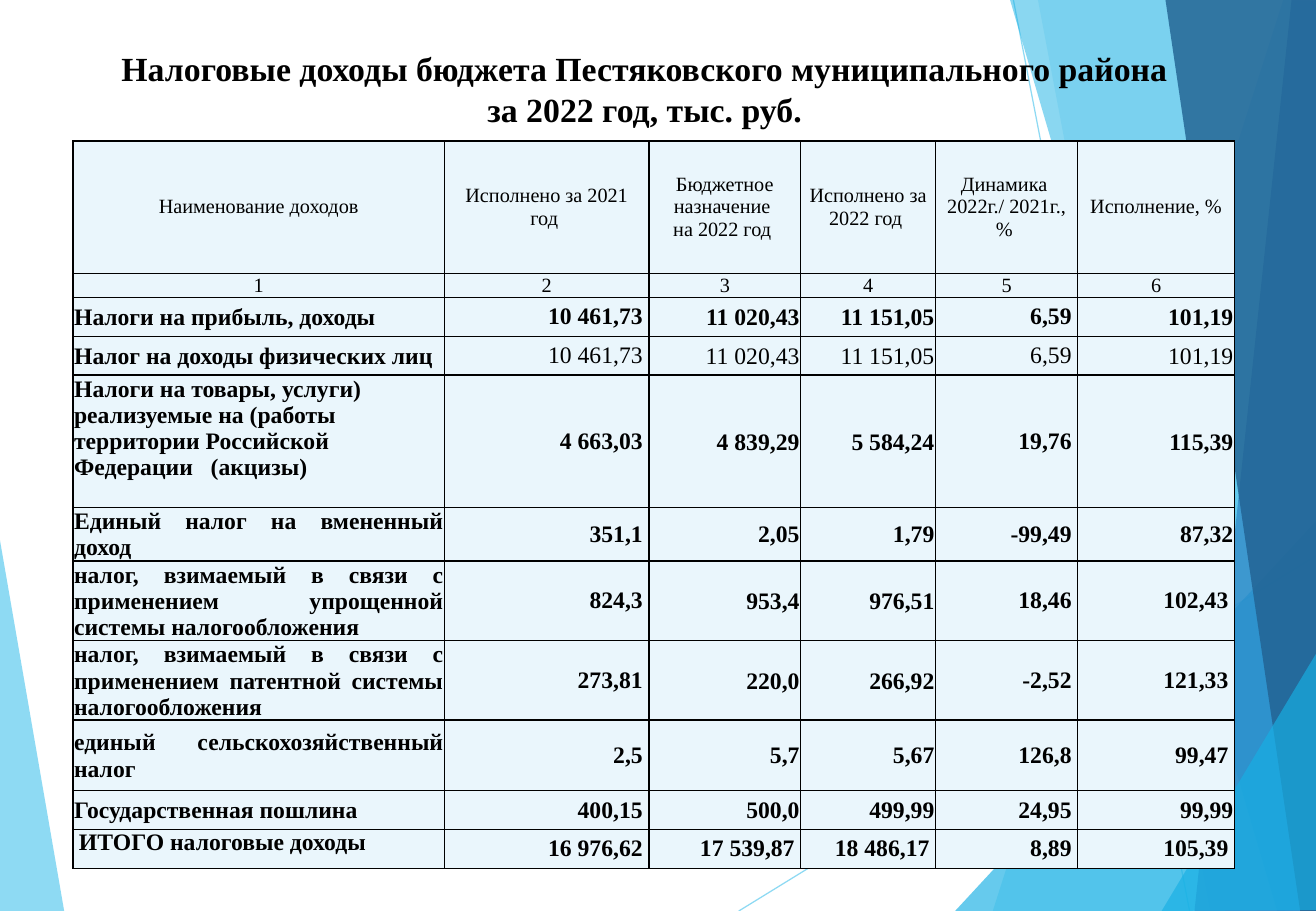
from pptx import Presentation
from pptx.dml.color import RGBColor as RGB
from pptx.enum.shapes import MSO_CONNECTOR as CONN
from pptx.enum.text import MSO_ANCHOR as ANCHOR, MSO_AUTO_SIZE as AUTO, PP_ALIGN as ALIGN
from pptx.oxml.ns import qn
from pptx.util import Inches, Pt
from lxml.etree import SubElement

COLORS = {
    "text": "000000",
    "cell": "EAF6FC",
    "sky": "5FCBEF",
    "azure": "17B0E4",
    "blue": "2E83C3",
    "navy": "226292",
}

LEFT_FACET = ("sky", 70, [(-0.01, 4.39), (0.53, 7.51), (-0.01, 7.5)])
RAYS = [((6.08, 7.5), (10.84, 4.57)), ((8.34, 0), (9.79, 7.5))]
RIGHT_FACETS = [
    ("sky", 36, [(10.56, 0), (8.17, 7.5), (10.85, 7.51), (10.84, 0.01)]),
    ("sky", 20, [(8.54, -0.01), (9.96, 7.5), (10.84, 7.5), (10.84, -0.01)]),
    ("azure", 66, [(7.86, 7.5), (10.83, 4.29), (10.84, 7.5)]),
    ("azure", 50, [(8.31, -0.01), (10.51, 7.5), (10.84, 7.49), (10.84, -0.01)]),
    ("blue", 70, [(10.63, -0.01), (9.83, 7.5), (10.84, 7.5), (10.84, -0.01)]),
    ("navy", 82, [(9.59, -0.01), (10.7, 7.5), (10.85, 7.5), (10.84, -0.01)]),
    ("azure", 66, [(9.56, 7.5), (10.85, 5.35), (10.86, 7.49)]),
]

COLS = [3.06, 1.68, 1.25, 1.11, 1.17, 1.29]
HEIGHTS = [1.09, 0.2, 0.32, 0.32, 1.09, 0.44, 0.65, 0.65, 0.58, 0.32, 0.32]
ROWS = [
    ["Наименование доходов", "Исполнено за 2021 год ", "Бюджетное назначение \nна 2022 год ",
     "Исполнено за 2022 год ", "Динамика \n2022г./ 2021г.,% ", "Исполнение, %"],
    ["1", "2", "3", "4", "5", "6"],
    ["Нaлоги нa прибыль, доходы",
     "10 461,73", "11 020,43", "11 151,05", "6,59", "101,19"],
    ["Нaлог нa доходы физических лиц",
     "10 461,73", "11 020,43", "11 151,05", "6,59", "101,19"],
    ["Налоги нa товары, услуги) реализуемые нa (работы территории Российской Федерации   (акцизы)",
     "4 663,03", "4 839,29", "5 584,24", "19,76", "115,39"],
    ["Единый налог на вмененный доход",
     "351,1", "2,05", "1,79", "-99,49", "87,32"],
    ["налог, взимаемый в связи с применением упрощенной системы налогообложения ",
     "824,3", "953,4", "976,51", "18,46", "102,43"],
    ["налог, взимаемый в связи с применением патентной системы налогообложения",
     "273,81", "220,0", "266,92", "-2,52", "121,33"],
    ["единый сельскохозяйственный налог ",
     "2,5", "5,7", "5,67", "126,8", "99,47"],
    ["Государственная пошлина ",
     "400,15", "500,0", "499,99", "24,95", "99,99"],
    ["ИТОГО налоговые доходы",
     "16 976,62", "17 539,87", "18 486,17", "8,89", "105,39"],
]
HEADER_ROWS = 2
PERSONAL_TAX, EXCISE, TOTAL = 3, 4, 10
SPECIAL_REGIMES = (6, 7, 8)


class Deck:
    font = "Times New Roman"

    def __init__(self, prs):
        self.s = prs.slides.add_slide(prs.slide_layouts[5])

    def color(self, name):
        return RGB.from_string(COLORS[name])

    def set_alpha(self, element, percent):
        clr = element.find(".//" + qn("a:srgbClr"))
        SubElement(clr, qn("a:alpha"), val=str(percent * 1000))

    def facet(self, color, alpha, points):
        (x, y), *rest = [(Inches(px), Inches(py)) for px, py in points]
        builder = self.s.shapes.build_freeform(x, y)
        builder.add_line_segments(rest)
        sp = builder.convert_to_shape()
        sp.shadow.inherit = False
        sp.line.fill.background()
        sp.fill.solid()
        sp.fill.fore_color.rgb = self.color(color)
        self.set_alpha(sp._element.spPr, alpha)

    def ray(self, start, end):
        sp = self.s.shapes.add_connector(CONN.STRAIGHT, *map(Inches, start + end))
        sp.line.color.rgb = self.color("sky")
        sp.line.width = Pt(0.75)
        self.set_alpha(sp._element.spPr, 70)
        SubElement(sp._element.spPr, qn("a:effectLst"))

    def add_text(self, tf, text, size, bold, align):
        for i, line in enumerate(text.split("\n")):
            p = tf.add_paragraph() if i else tf.paragraphs[0]
            p.alignment = align
            r = p.add_run()
            r.text = line
            r.font.name = self.font
            r.font.size = Pt(size)
            r.font.bold = bold
            r.font.color.rgb = self.color("text")

    def title(self, text, x, y, w, h):
        sp = self.s.shapes.title
        self.s.shapes._spTree.append(sp._element)
        sp.left, sp.top, sp.width, sp.height = map(Inches, (x, y, w, h))
        tf = sp.text_frame
        tf.word_wrap = True
        tf.auto_size = AUTO.NONE
        tf.vertical_anchor = ANCHOR.MIDDLE
        self.add_text(tf, text, 20, True, ALIGN.CENTER)

    def border(self, cell):
        tcPr = cell._tc.get_or_add_tcPr()
        for side in ("a:lnL", "a:lnR", "a:lnT", "a:lnB"):
            ln = SubElement(tcPr, qn(side), w=str(Pt(1)))
            fill = SubElement(ln, qn("a:solidFill"))
            SubElement(fill, qn("a:srgbClr"), val=COLORS["text"])

    def cell(self, cell, text, row, col):
        header = row < HEADER_ROWS
        padded = (header or row == TOTAL or col in (1, 4)
                  or (col == 5 and row in SPECIAL_REGIMES))
        cell.margin_left = cell.margin_right = Inches(0.05 if padded else 0.01)
        cell.margin_top = Inches(0 if padded else 0.01)
        cell.margin_bottom = 0
        top = col == 0 and row in (EXCISE, TOTAL)
        cell.vertical_anchor = ANCHOR.TOP if top else ANCHOR.MIDDLE
        self.border(cell)
        cell.fill.solid()
        cell.fill.fore_color.rgb = self.color("cell")
        if header:
            align = ALIGN.CENTER
        elif col:
            align = ALIGN.RIGHT
        else:
            align = ALIGN.LEFT if top else ALIGN.JUSTIFY
        bold = not header and (row != PERSONAL_TAX or col == 0)
        self.add_text(cell.text_frame, text, 12 if header else 14, bold, align)

    def table(self, x, y):
        size = map(Inches, (x, y, sum(COLS), sum(HEIGHTS)))
        table = self.s.shapes.add_table(len(ROWS), len(COLS), *size).table
        for column, width in zip(table.columns, COLS):
            column.width = Inches(width)
        for row, height in zip(table.rows, HEIGHTS):
            row.height = Inches(height)
        for i, values in enumerate(ROWS):
            for j, text in enumerate(values):
                self.cell(table.cell(i, j), text, i, j)


def main():
    prs = Presentation()
    prs.slide_width, prs.slide_height = Inches(10.83), Inches(7.5)
    deck = Deck(prs)
    deck.facet(*LEFT_FACET)
    for start, end in RAYS:
        deck.ray(start, end)
    for facet in RIGHT_FACETS:
        deck.facet(*facet)
    deck.title("Налоговые доходы бюджета Пестяковского муниципального района за 2022 год, тыс. руб.",
               0.85, 0.3, 8.91, 0.86)
    deck.table(0.6, 1.16)
    prs.save("out.pptx")


if __name__ == "__main__":
    main()
